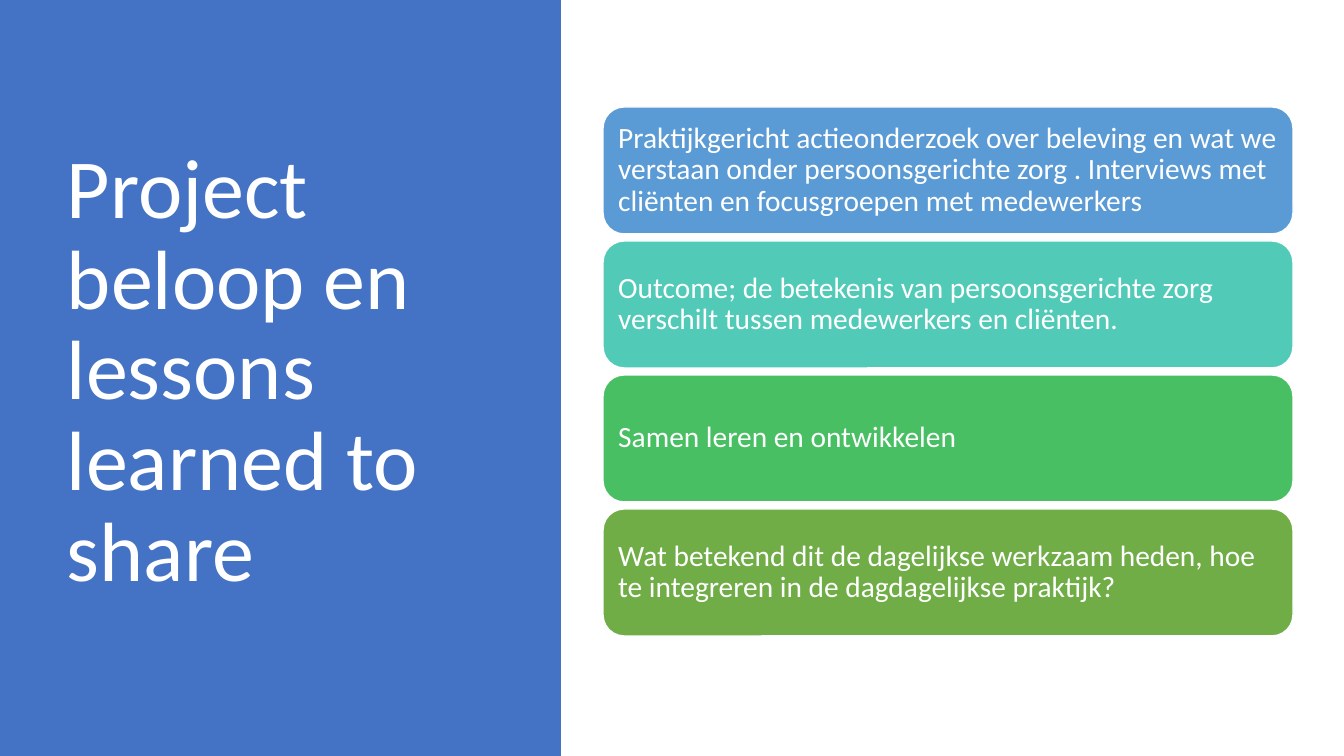
from pptx import Presentation
from pptx import util as u
from pptx.dml.color import RGBColor
from pptx.enum import shapes, text

PX = 12192000 / 1344  # EMU per px

WHITE = RGBColor(0xFF, 0xFF, 0xFF)
PANEL_BLUE = RGBColor(0x44, 0x72, 0xC4)
SKY = RGBColor(0x5B, 0x9B, 0xD5)
TEAL = RGBColor(0x52, 0xCA, 0xB8)
GREEN = RGBColor(0x49, 0xBF, 0x64)
OLIVE = RGBColor(0x70, 0xAD, 0x47)

TITLE = "Project beloop en lessons learned to share"
CARDS = [
    (SKY, "Praktijkgericht actieonderzoek over beleving en wat we verstaan onder "
          "persoonsgerichte zorg . Interviews met cliënten en focusgroepen met medewerkers"),
    (TEAL, "Outcome; de betekenis van persoonsgerichte zorg verschilt tussen "
           "medewerkers en cliënten."),
    (GREEN, "Samen leren en ontwikkelen"),
    (OLIVE, "Wat betekend dit de dagelijkse werkzaam heden, hoe te integreren in de "
            "dagdagelijkse praktijk?"),
]
CARD_TOP, CARD_PITCH = 107, 134


def px(*values):
    return [round(v * PX) for v in values]


def write(sp, content, size, inset):
    """Fill a shape with one white, left-aligned, vertically centred paragraph."""
    tf = sp.text_frame
    margin = px(inset)[0]
    frame = dict(word_wrap=True, vertical_anchor=text.MSO_ANCHOR.MIDDLE,
                 margin_left=margin, margin_right=margin,
                 margin_top=margin, margin_bottom=margin)
    for name, value in frame.items():
        setattr(tf, name, value)
    p = tf.paragraphs[0]
    p.alignment = text.PP_ALIGN.LEFT
    p.line_spacing = 0.9
    r = p.add_run()
    r.text = content
    for name, value in dict(name="Calibri", size=u.Pt(size)).items():
        setattr(r.font, name, value)
    r.font.color.rgb = WHITE


prs = Presentation()
prs.slide_width, prs.slide_height = px(1344, 756)
s = prs.slides.add_slide(prs.slide_layouts[6])

panel = s.shapes.add_shape(shapes.MSO_SHAPE.RECTANGLE, *px(0, 0, 561, 756))
panel.shadow.inherit = False
panel.fill.solid()
panel.fill.fore_color.rgb = PANEL_BLUE
panel.line.fill.background()

title = s.shapes.add_textbox(*px(57, 69, 419, 607))
write(title, TITLE, 60, 10)

for i, (color, content) in enumerate(CARDS):
    card = s.shapes.add_shape(shapes.MSO_SHAPE.ROUNDED_RECTANGLE,
                              *px(603, CARD_TOP + i * CARD_PITCH, 690, 127))
    card.shadow.inherit = False
    card.fill.solid()
    card.fill.fore_color.rgb = color
    card.line.color.rgb = WHITE
    card.line.width = u.Pt(1)
    write(card, content, 21, 9)

prs.save("out.pptx")
